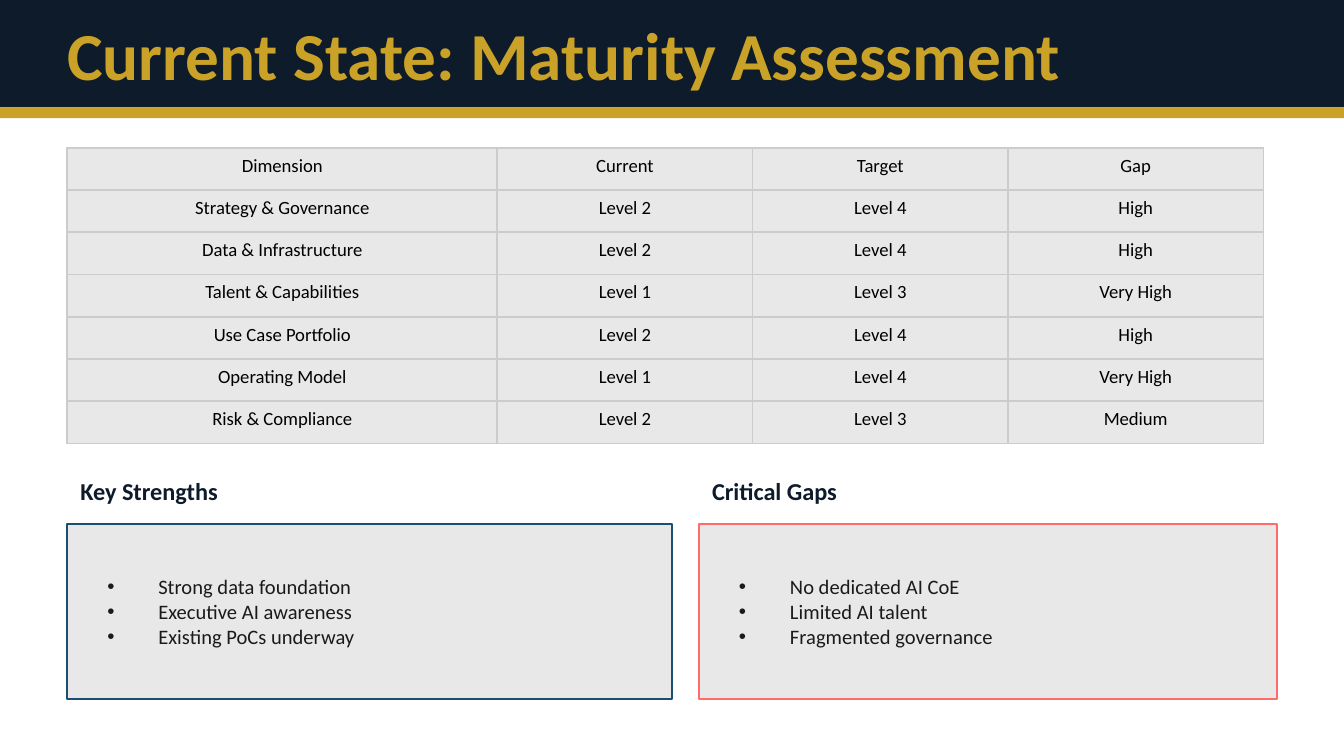
from lxml import etree
from pptx import Presentation
from pptx.dml.color import RGBColor
from pptx.enum.shapes import MSO_SHAPE
from pptx.enum.text import MSO_ANCHOR, PP_ALIGN
from pptx.oxml.ns import qn
from pptx.util import Inches, Pt

RECTANGLE = MSO_SHAPE.RECTANGLE
MIDDLE = MSO_ANCHOR.MIDDLE
CENTER = PP_ALIGN.CENTER

FONT = "Calibri"
NAVY = "0D1B2A"
GOLD = "C9A227"
PANEL = "E8E8E8"
GRID = "CCCCCC"
INK = "1A1A1A"

COLUMN_WIDTHS = [3.2, 1.9, 1.9, 1.9]
MATURITY = [
    ["Dimension", "Current", "Target", "Gap"],
    ["Strategy & Governance", "Level 2", "Level 4", "High"],
    ["Data & Infrastructure", "Level 2", "Level 4", "High"],
    ["Talent & Capabilities", "Level 1", "Level 3", "Very High"],
    ["Use Case Portfolio", "Level 2", "Level 4", "High"],
    ["Operating Model", "Level 1", "Level 4", "Very High"],
    ["Risk & Compliance", "Level 2", "Level 3", "Medium"],
]

# Heading, left, width, outline colour, points
FINDINGS = [
    ("Key Strengths", 0.5, 4.5, "1B4F72",
     ["Strong data foundation", "Executive AI awareness", "Existing PoCs underway"]),
    ("Critical Gaps", 5.2, 4.3, "FF6B6B",
     ["No dedicated AI CoE", "Limited AI talent", "Fragmented governance"]),
]


def color(value):
    return RGBColor.from_string(value)


def style(paragraph, size, ink, bold=False):
    for run in paragraph.runs:
        run.font.name = FONT
        run.font.size = Pt(size)
        run.font.bold = bold
        run.font.color.rgb = color(ink)


def add_box(slide, left, top, width, height, fill, outline=None):
    box = slide.shapes.add_shape(
        RECTANGLE, Inches(left), Inches(top), Inches(width), Inches(height))
    box.shadow.inherit = False
    box.fill.solid()
    box.fill.fore_color.rgb = color(fill)
    if outline:
        box.line.color.rgb = color(outline)
        box.line.width = Pt(1)
    else:
        box.line.fill.background()


def add_text(slide, left, top, width, height, text, size, ink, bold=False):
    frame = slide.shapes.add_textbox(
        Inches(left), Inches(top), Inches(width), Inches(height)).text_frame
    frame.word_wrap = True
    frame.vertical_anchor = MIDDLE
    frame.text = text
    for paragraph in frame.paragraphs:
        style(paragraph, size, ink, bold)
    return frame


def add_bullet(paragraph, indent):
    properties = paragraph._p.get_or_add_pPr()
    properties.set("marL", str(Inches(indent)))
    properties.set("indent", str(-Inches(indent)))
    etree.SubElement(properties, qn("a:buFont"), typeface="Arial")
    etree.SubElement(properties, qn("a:buChar"), char="•")


def add_borders(cell, ink):
    properties = cell._tc.get_or_add_tcPr()
    for position, side in enumerate(("lnL", "lnR", "lnT", "lnB")):
        border = etree.Element(qn(f"a:{side}"), w=str(Pt(1)))
        fill = etree.SubElement(border, qn("a:solidFill"))
        etree.SubElement(fill, qn("a:srgbClr"), val=ink)
        properties.insert(position, border)


def add_maturity_table(slide, left, top, height):
    table = slide.shapes.add_table(
        len(MATURITY), len(COLUMN_WIDTHS), Inches(left), Inches(top),
        Inches(sum(COLUMN_WIDTHS)), Inches(height)).table
    for column, width in zip(table.columns, COLUMN_WIDTHS):
        column.width = Inches(width)
    for row, values in zip(table.rows, MATURITY):
        for cell, value in zip(row.cells, values):
            cell.text = value
            cell.fill.solid()
            cell.fill.fore_color.rgb = color(PANEL)
            add_borders(cell, GRID)
            paragraph = cell.text_frame.paragraphs[0]
            paragraph.alignment = CENTER
            style(paragraph, 10, "000000")


def add_findings(slide, heading, left, width, outline, points):
    add_text(slide, left, 3.5, width, 0.3, heading, 13, NAVY, bold=True)
    add_box(slide, left, 3.9, width, 1.3, PANEL, outline)
    frame = add_text(slide, left + 0.2, 4, width - 0.4, 1.1,
                     "\n".join(points), 11, INK)
    for paragraph in frame.paragraphs:
        add_bullet(paragraph, 0.38)


def main():
    deck = Presentation()
    # Widescreen, 16:9
    deck.slide_width = Inches(10)
    deck.slide_height = Inches(10) * 9 // 16
    slide = deck.slides.add_slide(deck.slide_layouts[6])

    # Title band
    add_box(slide, 0, 0, 10, 0.8, NAVY)
    add_box(slide, 0, 0.8, 10, 0.08, GOLD)
    title = add_text(slide, 0.5, 0.15, 9, 0.5,
                     "Current State: Maturity Assessment", 36, GOLD, bold=True)
    title.margin_left = title.margin_right = 0
    title.margin_top = title.margin_bottom = 0

    # Maturity by dimension
    add_maturity_table(slide, 0.5, 1.1, 2.2)

    # Strengths and gaps
    for findings in FINDINGS:
        add_findings(slide, *findings)

    deck.save("out.pptx")


if __name__ == "__main__":
    main()
